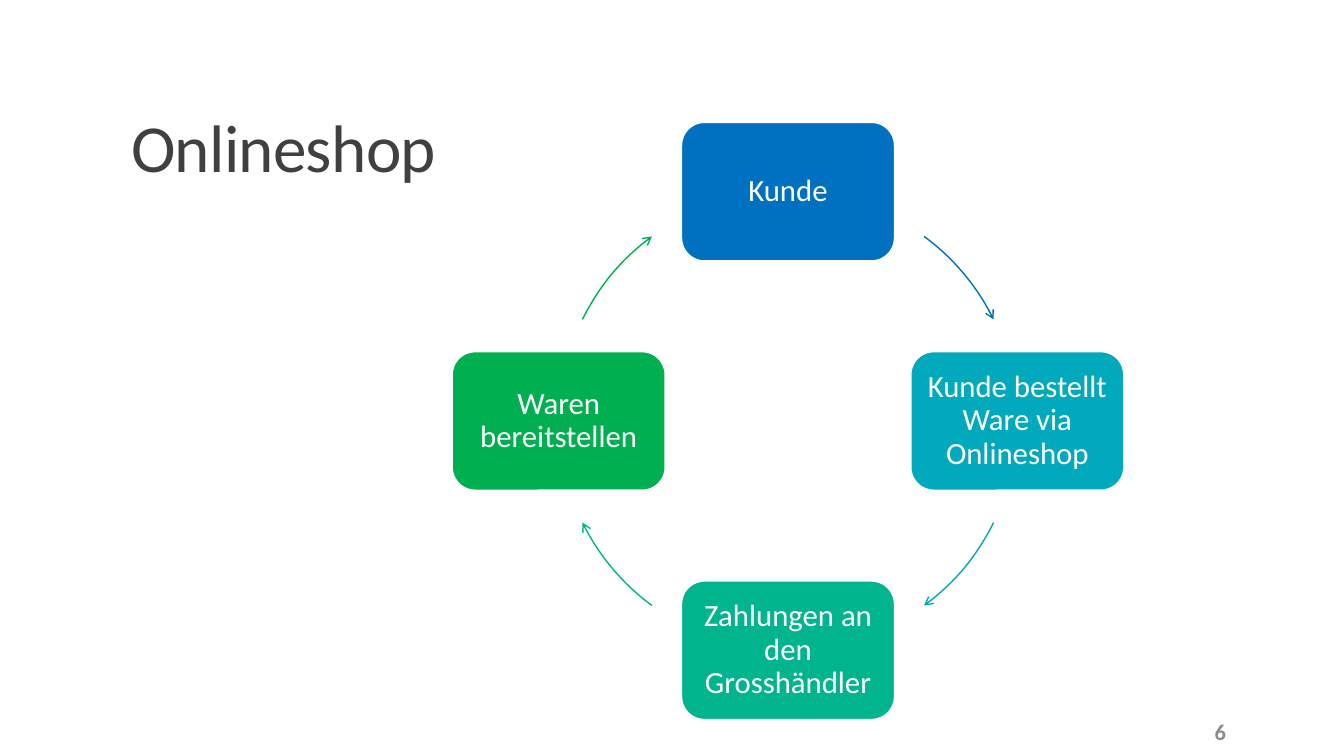
from lxml import etree
from pptx import Presentation
from pptx.dml.color import RGBColor
from pptx.enum.shapes import MSO_SHAPE
from pptx.enum.text import MSO_ANCHOR, MSO_AUTO_SIZE, PP_ALIGN
from pptx.oxml.ns import qn
from pptx.util import Pt

ROUND, ARC = MSO_SHAPE.ROUNDED_RECTANGLE, MSO_SHAPE.ARC
MID, LOW = MSO_ANCHOR.MIDDLE, MSO_ANCHOR.BOTTOM
LEFT, MIDST, RIGHT = PP_ALIGN.LEFT, PP_ALIGN.CENTER, PP_ALIGN.RIGHT
FIXED = MSO_AUTO_SIZE.NONE

MID_X, MID_Y, RAD = 562.9, 300.7, 163.8
BOX_W, BOX_H = 152.4, 99.2
STEPS = [
    ("Kunde", "0070C0", 0, -1, 36.4),
    ("Kunde bestellt Ware via Onlineshop", "00A9BB", 1, 0, 116.3),
    ("Zahlungen an den Grosshändler", "00B58D", 0, 1, 216.4),
    ("Waren bereitstellen", "00B050", -1, 0, 296.3),
]
SWEEP = 27.3


def paint(text):
    return RGBColor.from_string(text)


class Deck:
    """Holds the style and the current slide."""

    def __init__(self, show, font="Calibri"):
        self.font = font
        self.slide = show.slides.add_slide(show.slide_layouts[5])

    def label(self, shape, text, size, color, align, anchor, space=1.0, bold=False):
        frame = shape.text_frame
        frame.text = text
        frame.word_wrap = True
        frame.auto_size = FIXED
        frame.vertical_anchor = anchor
        para = frame.paragraphs[0]
        para.alignment, para.line_spacing = align, space
        font = para.font
        font.name, font.size, font.bold = self.font, Pt(size), bold
        font.color.rgb = paint(color)
        return para

    def title(self, text, x, y, w, h):
        head = self.slide.shapes.title
        head.left, head.top, head.width, head.height = Pt(x), Pt(y), Pt(w), Pt(h)
        para = self.label(head, text, 48, "404040", LEFT, LOW, 0.85)
        para.runs[0]._r.get_or_add_rPr().set("spc", "-50")

    def number(self, text, x, y, w, h):
        box = self.slide.shapes.add_textbox(Pt(x), Pt(y), Pt(w), Pt(h))
        self.label(box, text, 16, "8C8C8C", RIGHT, MID, bold=True)

    def shape(self, kind, x, y, w, h, line, width):
        item = self.slide.shapes.add_shape(
            kind, Pt(x - w / 2), Pt(y - h / 2), Pt(w), Pt(h))
        item.shadow.inherit = False
        item.line.color.rgb = paint(line)
        item.line.width = Pt(width)
        return item

    def box(self, text, color, x, y):
        item = self.shape(ROUND, x, y, BOX_W, BOX_H, "FFFFFF", 1.25)
        item.fill.solid()
        item.fill.fore_color.rgb = paint(color)
        frame = item.text_frame
        frame.margin_left = frame.margin_right = Pt(6)
        self.label(item, text, 22, "FFFFFF", MIDST, MID, 0.9)

    def arrow(self, color, turn):
        item = self.shape(ARC, MID_X, MID_Y, 2 * RAD, 2 * RAD, color, 1)
        item.fill.background()
        for i, angle in enumerate((turn, turn + SWEEP)):
            item.adjustments[i] = (angle - 90) % 360 * 0.6
        line = item.line._get_or_add_ln()
        etree.SubElement(line, qn("a:tailEnd"), type="arrow")


def main():
    show = Presentation()
    show.slide_width, show.slide_height = Pt(960), Pt(540)
    deck = Deck(show)
    deck.title("Onlineshop", 86.4, 22.3, 792, 114.5)
    deck.number("6", 779.8, 508.3, 103, 28.8)
    for text, color, col, row, turn in STEPS:
        deck.box(text, color, MID_X + col * RAD, MID_Y + row * RAD)
        deck.arrow(color, turn)
    show.save("out.pptx")


if __name__ == "__main__":
    main()
